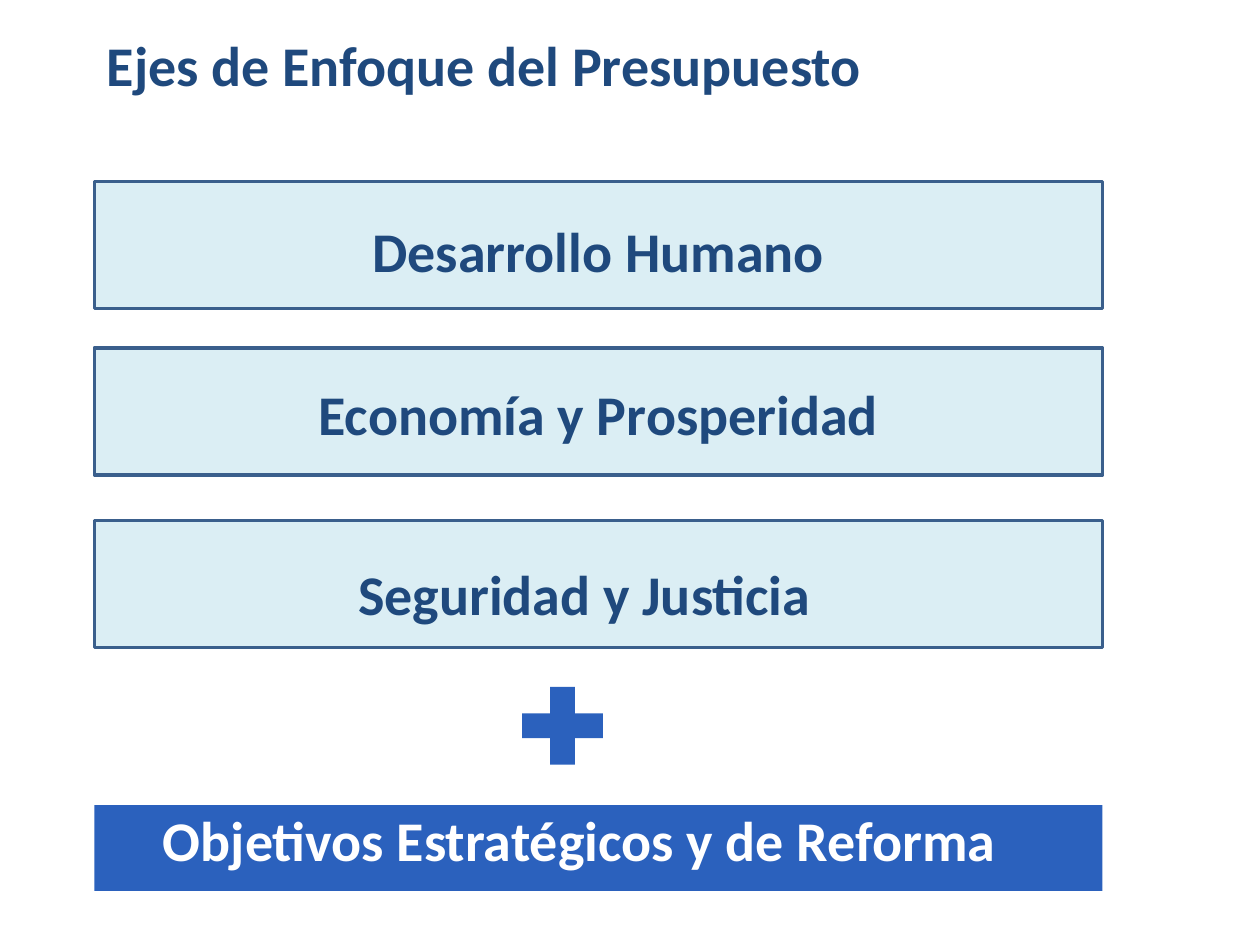
from dataclasses import dataclass

from pptx import Presentation
from pptx.dml.color import RGBColor
from pptx.enum import shapes, text
from pptx.util import Inches, Pt


@dataclass(frozen=True)
class Theme:
    font: str = "Calibri"
    size: int = 32
    navy: str = "1F497D"
    edge: str = "3A5F8C"
    pale: str = "DBEEF4"
    blue: str = "2B61BD"
    white: str = "FFFFFF"


THEME = Theme()
KIND = shapes.MSO_SHAPE
ALIGN = text.PP_ALIGN
WIDE, HIGH = 10, 7.5
LEFT, SPAN = 0.75, 8
BAR, LABEL = 1.01, 0.64

# Each axis: name, top of its bar, left and top of its label
AXES = [
    ("Desarrollo Humano", 1.44, LEFT, 1.67),
    ("Economía y Prosperidad", 2.76, LEFT, 2.96),
    ("Seguridad y Justicia", 4.13, 0.64, 4.39),
]


def add_form(slide, kind, box, fill, edge=None):
    form = slide.shapes.add_shape(kind, *map(Inches, box))
    form.shadow.inherit = False
    form.fill.solid()
    form.fill.fore_color.rgb = RGBColor.from_string(fill)
    if edge:
        form.line.color.rgb = RGBColor.from_string(edge)
        form.line.width = Pt(2)
    else:
        form.line.fill.background()


def add_label(slide, words, box, color=THEME.navy, align=ALIGN.CENTER):
    frame = slide.shapes.add_textbox(*map(Inches, box)).text_frame
    frame.word_wrap = True
    frame.auto_size = text.MSO_AUTO_SIZE.SHAPE_TO_FIT_TEXT
    line = frame.paragraphs[0]
    line.alignment = align
    run = line.add_run()
    run.text = words
    style = {"name": THEME.font, "size": Pt(THEME.size), "bold": True}
    for key, value in style.items():
        setattr(run.font, key, value)
    run.font.color.rgb = RGBColor.from_string(color)


def add_axis(slide, name, top, left, base):
    add_form(slide, KIND.RECTANGLE, (LEFT, top, SPAN, BAR), THEME.pale, THEME.edge)
    add_label(slide, name, (left, base, SPAN, LABEL))


def main():
    deck = Presentation()
    deck.slide_width, deck.slide_height = Inches(WIDE), Inches(HIGH)
    slide = deck.slides.add_slide(deck.slide_layouts[6])

    add_label(slide, "Ejes de Enfoque del Presupuesto",
              (LEFT, 0.19, 7.84, LABEL), align=ALIGN.LEFT)
    for axis in AXES:
        add_axis(slide, *axis)
    add_form(slide, KIND.MATH_PLUS, (4.03, 5.34, 0.87, 0.84), THEME.blue)
    add_form(slide, KIND.RECTANGLE, (LEFT, 6.39, SPAN, 0.68), THEME.blue)
    add_label(slide, "Objetivos Estratégicos y de Reforma",
              (0.6, 6.34, SPAN, LABEL), THEME.white)
    deck.save("out.pptx")


if __name__ == "__main__":
    main()
